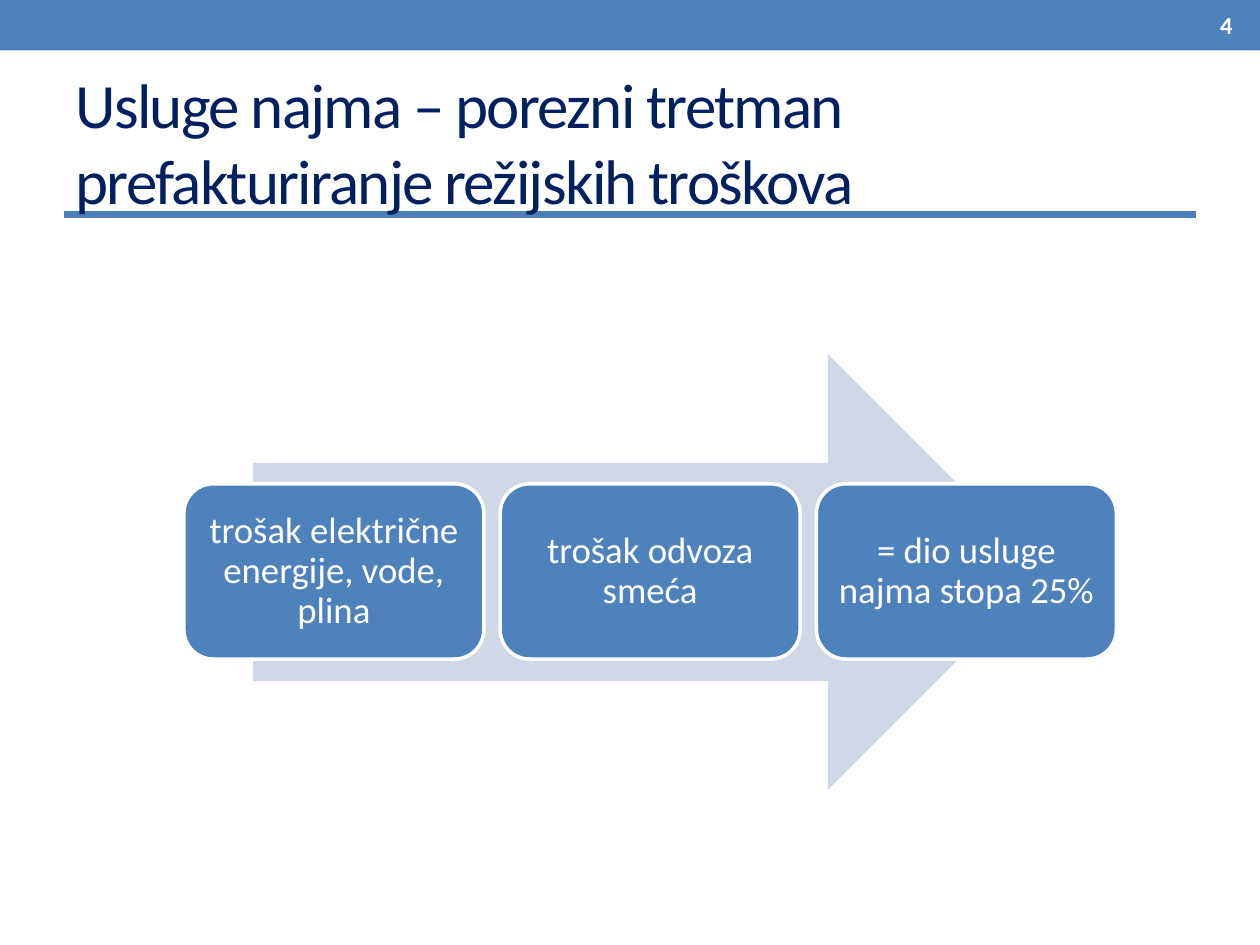
from lxml import etree
from pptx import Presentation
from pptx.dml.color import RGBColor
from pptx.enum.shapes import MSO_CONNECTOR, MSO_SHAPE
from pptx.enum.text import MSO_ANCHOR, MSO_AUTO_SIZE, PP_ALIGN
from pptx.oxml.ns import qn
from pptx.util import Inches, Pt

RECTANGLE = MSO_SHAPE.RECTANGLE
ROUNDED = MSO_SHAPE.ROUNDED_RECTANGLE
RIGHT_ARROW = MSO_SHAPE.RIGHT_ARROW
STRAIGHT = MSO_CONNECTOR.STRAIGHT
MIDDLE = MSO_ANCHOR.MIDDLE
NO_AUTOFIT = MSO_AUTO_SIZE.NONE
LEFT, CENTER, RIGHT = PP_ALIGN.LEFT, PP_ALIGN.CENTER, PP_ALIGN.RIGHT

FONT = "Calibri"
BLUE, RULE_BLUE, PALE_BLUE = "4F81BD", "4B7EBC", "D0D8E8"
NAVY, WHITE = "002060", "FFFFFF"

TITLE = "Usluge najma – porezni tretman prefakturiranje režijskih troškova"
COSTS = [
    "trošak električne energije, vode, plina",
    "trošak odvoza smeća",
    "= dio usluge najma stopa 25%",
]
COST_LEFT, COST_TOP, COST_WIDTH, COST_HEIGHT, COST_GAP = 1.46, 3.84, 2.38, 1.39, 0.13


def color(hex_value):
    """Return the colour for a hex string."""
    return RGBColor.from_string(hex_value)


def write(frame, text, size, hex_value, align, bold=False):
    """Write one run into a vertically centred text frame and return it."""
    frame.word_wrap = True
    frame.auto_size = NO_AUTOFIT
    frame.vertical_anchor = MIDDLE
    paragraph = frame.paragraphs[0]
    paragraph.alignment = align
    run = paragraph.add_run()
    run.text = text
    run.font.name = FONT
    run.font.size = Pt(size)
    run.font.bold = bold
    run.font.color.rgb = color(hex_value)
    return run


def add_filled(slide, kind, left, top, width, height, fill):
    """Add a flat preset shape without an outline."""
    shape = slide.shapes.add_shape(
        kind, Inches(left), Inches(top), Inches(width), Inches(height))
    shape.shadow.inherit = False
    shape.fill.solid()
    shape.fill.fore_color.rgb = color(fill)
    shape.line.fill.background()
    return shape


def add_title_rule(slide):
    """Add the heavy line under the title."""
    rule = slide.shapes.add_connector(
        STRAIGHT, Inches(0.51), Inches(1.7), Inches(9.49), Inches(1.7))
    rule.line.color.rgb = color(RULE_BLUE)
    rule.line.width = Pt(4)
    etree.SubElement(rule.element.spPr, qn("a:effectLst"))


def format_title(slide):
    """Place the title in front of its rule and fill it."""
    title = slide.shapes.title
    title.left, title.top = Inches(0.5), Inches(0.58)
    title.width, title.height = Inches(9), Inches(1.08)
    run = write(title.text_frame, TITLE, 36, NAVY, LEFT)
    run.font._element.set("spc", "-100")
    title.element.getparent().append(title.element)


def add_cost(slide, index, text):
    """Add one rounded cost box in its column."""
    left = COST_LEFT + index * (COST_WIDTH + COST_GAP)
    box = add_filled(slide, ROUNDED, left, COST_TOP, COST_WIDTH, COST_HEIGHT, BLUE)
    box.line.color.rgb = color(WHITE)
    box.line.width = Pt(2)
    frame = box.text_frame
    frame.margin_left = frame.margin_right = Inches(0.09)
    frame.margin_top = frame.margin_bottom = Inches(0.09)
    write(frame, text, 21, WHITE, CENTER)
    frame.paragraphs[0].line_spacing = 0.9


def add_slide_number(slide):
    """Add the slide number on the top band."""
    number = slide.shapes.add_textbox(
        Inches(9.09), Inches(0.02), Inches(0.79), Inches(0.36))
    write(number.text_frame, "4", 14, WHITE, RIGHT, bold=True)


def main():
    """Build the slide and save it."""
    presentation = Presentation()
    presentation.slide_width, presentation.slide_height = Inches(10), Inches(7.5)
    slide = presentation.slides.add_slide(presentation.slide_layouts[5])
    add_filled(slide, RECTANGLE, 0, 0, 10, 0.4, BLUE)
    add_title_rule(slide)
    format_title(slide)
    add_filled(slide, RIGHT_ARROW, 2.01, 2.81, 6.29, 3.46, PALE_BLUE)
    for index, text in enumerate(COSTS):
        add_cost(slide, index, text)
    add_slide_number(slide)
    presentation.save("out.pptx")


if __name__ == "__main__":
    main()
